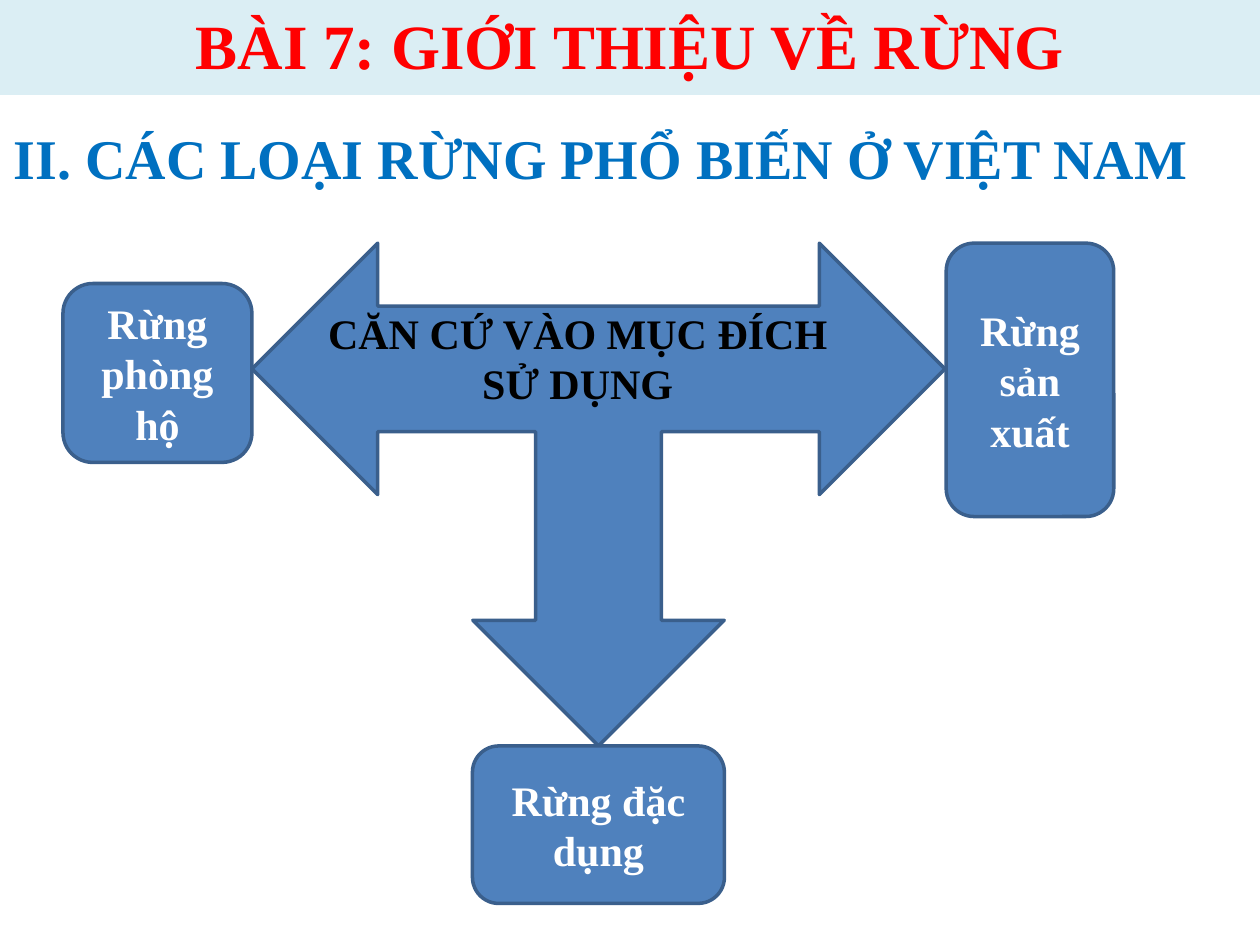
import pptx
import pptx.util
import pptx.dml.color
import pptx.enum.shapes
import pptx.enum.text

Inches = pptx.util.Inches
SHAPES = pptx.enum.shapes.MSO_SHAPE
ALIGN = pptx.enum.text.PP_ALIGN
ANCHOR = pptx.enum.text.MSO_ANCHOR


def color(value):
    return pptx.dml.color.RGBColor.from_string(value)


def write_text(shape, text, size=24, font_color="FFFFFF", align=ALIGN.CENTER, anchor=ANCHOR.MIDDLE):
    frame = shape.text_frame
    frame.word_wrap = True
    frame.vertical_anchor = anchor
    paragraph = frame.paragraphs[0]
    paragraph.alignment = align
    run = paragraph.add_run()
    run.text = text
    run.font.name = "Times New Roman"
    run.font.size = pptx.util.Pt(size)
    run.font.bold = True
    run.font.color.rgb = color(font_color)


def add_box(slide, kind, box, fill="4F81BD", line="3A5F8C", width=2):
    shape = slide.shapes.add_shape(kind, *map(Inches, box))
    shape.shadow.inherit = False
    shape.fill.solid()
    shape.fill.fore_color.rgb = color(fill)
    shape.line.color.rgb = color(line)
    shape.line.width = pptx.util.Pt(width)
    return shape


def add_label(slide, box, text, **text_format):
    label = slide.shapes.add_textbox(*map(Inches, box))
    write_text(label, text, anchor=ANCHOR.TOP, **text_format)
    label.text_frame.auto_size = pptx.enum.text.MSO_AUTO_SIZE.SHAPE_TO_FIT_TEXT


def add_title_band(slide, box):
    band = add_box(slide, SHAPES.RECTANGLE, box, fill="DBEEF4", line="DBEEF4", width=0.75)
    write_text(band, "BÀI 7: GIỚI THIỆU VỀ RỪNG", size=36, font_color="FF0000", anchor=ANCHOR.TOP)


def add_forest_diagram(slide, box):
    left, top, width, height = box
    arrow = add_box(slide, SHAPES.LEFT_RIGHT_UP_ARROW, box)
    arrow.rotation = 180
    add_label(slide, (left + 0.5, top + 0.46, 4.17, 0.91),
              "CĂN CỨ VÀO MỤC ĐÍCH SỬ DỤNG", font_color="000000")
    forest_types = [
        ("Rừng phòng hộ", (left - 1.5, top + 0.32, 1.5, 1.42)),
        ("Rừng sản xuất", (left + width + 0.01, top, 1.33, 2.17)),
        ("Rừng đặc dụng", (left + width / 2 - 1, top + height, 2, 1.25)),
    ]
    for text, forest_box in forest_types:
        write_text(add_box(slide, SHAPES.ROUNDED_RECTANGLE, forest_box), text)


def main():
    presentation = pptx.Presentation()
    presentation.slide_width = Inches(10)
    presentation.slide_height = Inches(7.5)
    slide = presentation.slides.add_slide(presentation.slide_layouts[6])
    add_label(slide, (0.01, 0.93, 10.03, 0.64), "II. CÁC LOẠI RỪNG PHỔ BIẾN Ở VIỆT NAM",
              size=32, font_color="0070C0", align=ALIGN.LEFT)
    add_forest_diagram(slide, (2, 1.93, 5.5, 3.99))
    add_title_band(slide, (0, 0, 10, 0.75))
    presentation.save("out.pptx")


if __name__ == "__main__":
    main()
